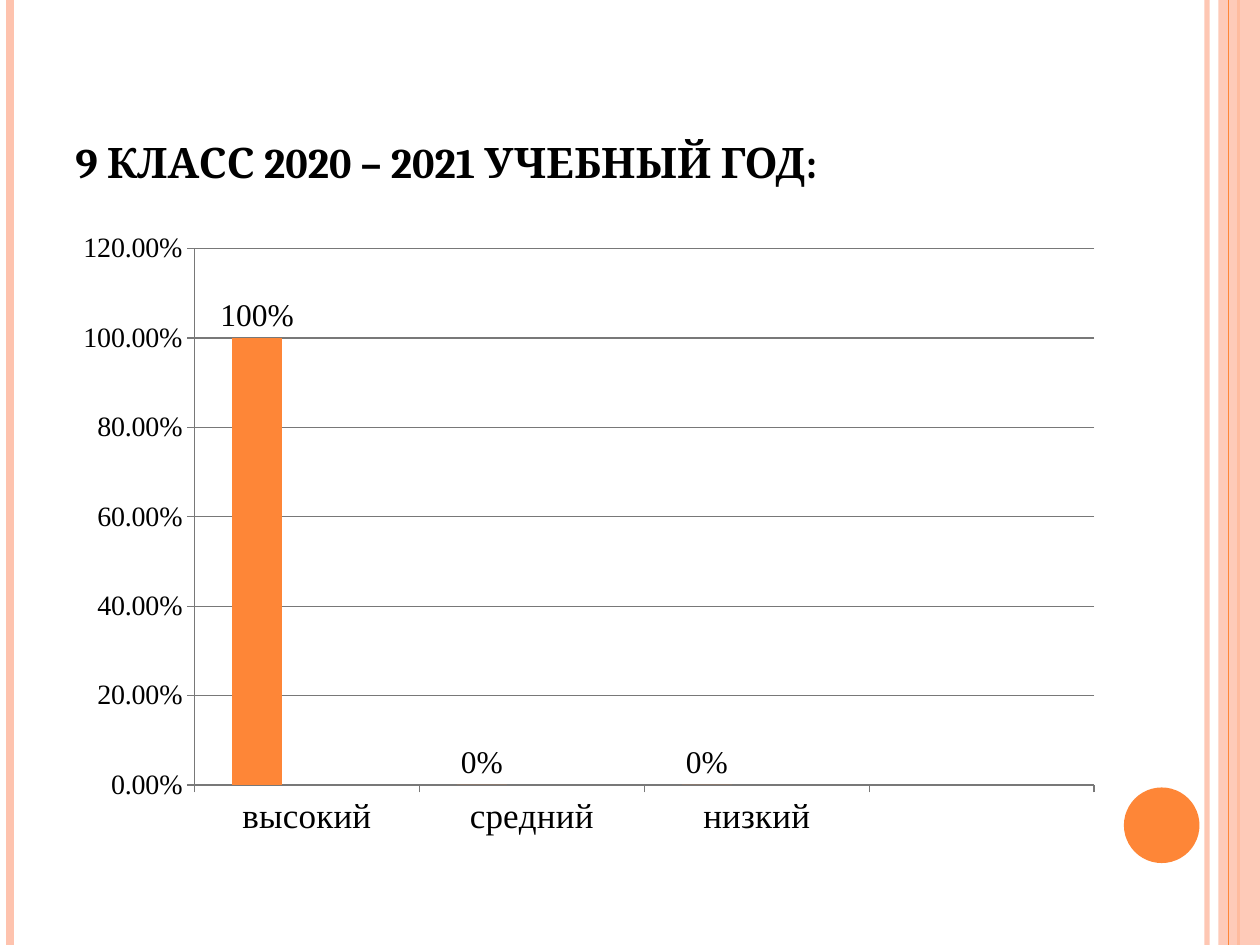
from lxml import etree
from pptx import Presentation
from pptx.chart.data import CategoryChartData
from pptx.dml.color import RGBColor
from pptx.enum.chart import XL_CHART_TYPE, XL_LABEL_POSITION, XL_TICK_MARK
from pptx.enum.shapes import MSO_CONNECTOR, MSO_SHAPE
from pptx.enum.text import MSO_ANCHOR
from pptx.oxml import parse_xml
from pptx.oxml.ns import nsdecls, qn
from pptx.util import Inches, Pt

ORANGE = RGBColor(0xFE, 0x86, 0x37)
PEACH = RGBColor(0xFE, 0xC3, 0xAE)
BLUE = RGBColor(0x75, 0x98, 0xD9)
RED = RGBColor(0xB3, 0x2C, 0x16)
GRAY = RGBColor(0x78, 0x78, 0x78)
BLACK = RGBColor(0, 0, 0)

WIDTH, HEIGHT = 10, 7.5
TITLE = "9 класс 2020 – 2021 учебный год:"
LEVELS = ["высокий", "средний", "низкий", ""]
SERIES = [
    ("Series 1", (1, 0, 0, None), ORANGE),
    ("Series 2", (None,) * 4, BLUE),
    ("Series 3", (None,) * 4, RED),
]
# x, colour, width in points, opacity in percent
STRIPES_BEHIND = [(9.58, PEACH, 3, 93), (0.08, PEACH, 4.5, 100), (9.83, ORANGE, 1.5, 100)]
STRIPES_FRONT = [(9.75, ORANGE, 0.75, 100)]
PLOT_LAYOUT = {"x": 0.125, "y": 0.045, "w": 0.854, "h": 0.853}


def set_opacity(sp, percent):
    color = next(sp._element.spPr.iter(qn("a:srgbClr")))
    etree.SubElement(color, qn("a:alpha")).set("val", str(percent * 1000))


def add_stripes(shapes, stripes):
    for x, color, width, opacity in stripes:
        line = shapes.add_connector(MSO_CONNECTOR.STRAIGHT, Inches(x), 0, Inches(x), Inches(HEIGHT))
        line.line.color.rgb = color
        line.line.width = Pt(width)
        if opacity < 100:
            set_opacity(line, opacity)
        etree.SubElement(line._element.spPr, qn("a:effectLst"))


def add_filled(shapes, kind, box, color):
    sp = shapes.add_shape(kind, *map(Inches, box))
    sp.shadow.inherit = False
    sp.fill.solid()
    sp.fill.fore_color.rgb = color
    sp.line.fill.background()
    return sp


def style_font(font, **values):
    font.color.rgb = BLACK
    for name, value in values.items():
        setattr(font, name, value)


def add_title(shapes):
    tf = shapes.add_textbox(*map(Inches, (0.5, 0.3, 8.17, 1.25))).text_frame
    tf.word_wrap = True
    tf.vertical_anchor = MSO_ANCHOR.BOTTOM
    r = tf.paragraphs[0].add_run()
    r.text = TITLE
    style_font(r.font, name="Cambria", size=Pt(30), bold=True)
    r.font._element.set("cap", "small")


def set_plot_layout(chart):
    """Fix the inner plot area as fractions of the chart frame."""
    area = chart._chartSpace.chart.plotArea
    for old in area.findall(qn("c:layout")):
        area.remove(old)
    sizes = "".join(f'<c:{key} val="{value}"/>' for key, value in PLOT_LAYOUT.items())
    area.insert(0, parse_xml(
        f'<c:layout {nsdecls("c")}><c:manualLayout><c:layoutTarget val="inner"/>'
        f'<c:xMode val="edge"/><c:yMode val="edge"/>{sizes}</c:manualLayout></c:layout>'))


def add_level_chart(shapes):
    data = CategoryChartData(number_format="0%")
    data.categories = LEVELS
    for name, values, _ in SERIES:
        data.add_series(name, values)
    box = map(Inches, (0.5, 1.75, 8.36, 4.99))
    chart = shapes.add_chart(XL_CHART_TYPE.COLUMN_CLUSTERED, *box, data).chart
    chart.has_legend = chart.has_title = False
    style_font(chart.font, name="Cambria", size=Pt(10))

    plot = chart.plots[0]
    plot.gap_width, plot.overlap = 150, 0
    plot.vary_by_categories = False
    for series, (_, _, color) in zip(plot.series, SERIES):
        series.format.fill.solid()
        series.format.fill.fore_color.rgb = color
        series.invert_if_negative = False

    labels = plot.series[0].data_labels
    labels.show_value = True
    labels.number_format, labels.number_format_is_linked = "0%", False
    labels.position = XL_LABEL_POSITION.OUTSIDE_END
    style_font(labels.font, name="Times New Roman", size=Pt(18))

    values = chart.value_axis
    values.minimum_scale, values.maximum_scale, values.major_unit = 0, 1.2, 0.2
    values.has_major_gridlines = True
    values.tick_labels.number_format = "0.00%"
    values.tick_labels.number_format_is_linked = False
    for axis, size in ((chart.category_axis, 20), (values, 16)):
        axis.major_tick_mark = XL_TICK_MARK.OUTSIDE
        style_font(axis.tick_labels.font, name="Times New Roman", size=Pt(size))
    for part in (chart.category_axis, values, values.major_gridlines):
        part.format.line.color.rgb = GRAY
        part.format.line.width = Pt(0.75)
    set_plot_layout(chart)


def main():
    prs = Presentation()
    prs.slide_width, prs.slide_height = Inches(WIDTH), Inches(HEIGHT)
    shapes = prs.slides.add_slide(prs.slide_layouts[6]).shapes
    add_stripes(shapes, STRIPES_BEHIND)
    band = add_filled(shapes, MSO_SHAPE.RECTANGLE, (9.67, 0, 0.33, HEIGHT), PEACH)
    set_opacity(band, 87)
    add_stripes(shapes, STRIPES_FRONT)
    add_filled(shapes, MSO_SHAPE.OVAL, (8.92, 6.25, 0.6, 0.6), ORANGE)
    add_title(shapes)
    add_level_chart(shapes)
    prs.save("out.pptx")


if __name__ == "__main__":
    main()
